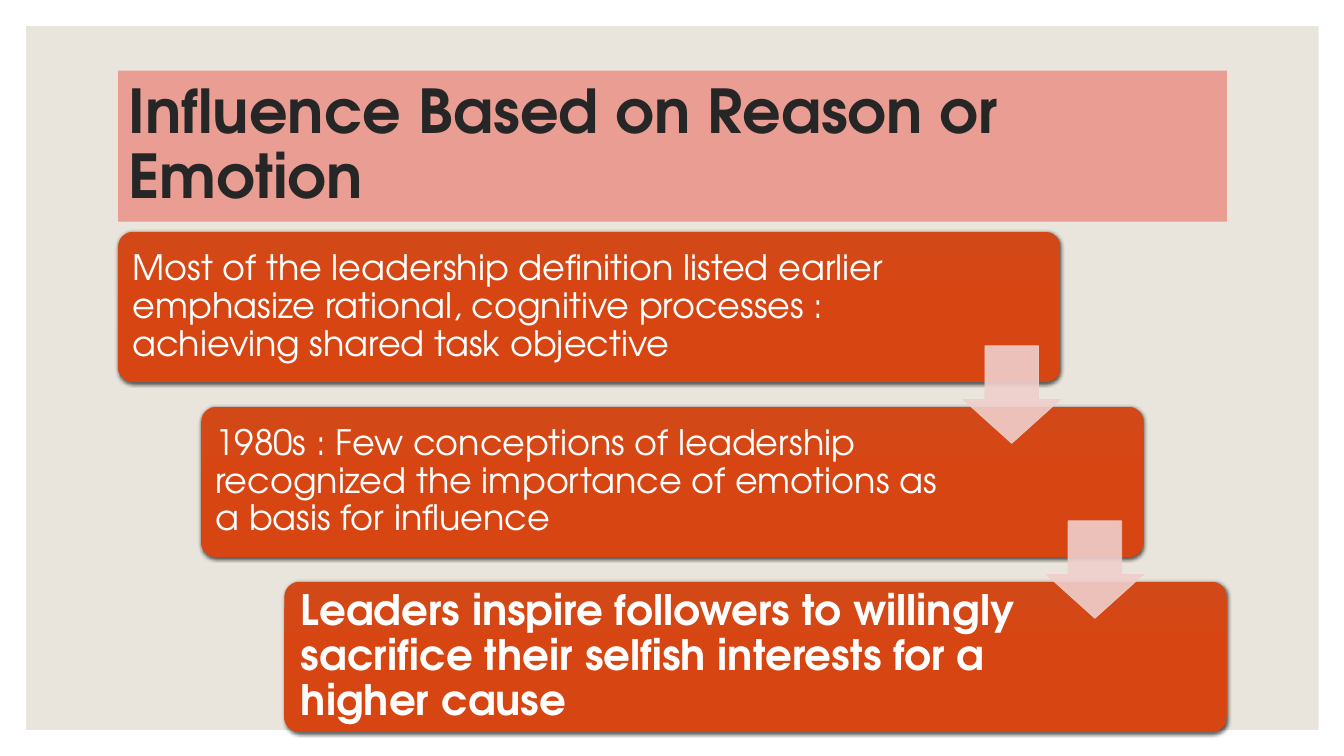
import copy

import pptx
import pptx.dml.color
import pptx.enum.shapes
import pptx.enum.text
import pptx.oxml
import pptx.util
from pptx.oxml.ns import qn

SHAPES = pptx.enum.shapes.MSO_SHAPE
FONT = "TeX Gyre Adventor"
PANEL = (1.95, 3.47, 96.17, 93.07)
HEADING = (8.78, 9.33, 82.5, 20)
CASCADE = (8.78, 30.67, 82.5, 66.13)
CARD_GRADIENT = [(0, "D34817"), (0.5, "D74512"), (1, "D64512")]
STATEMENTS = [
    ("Most of the leadership definition listed earlier emphasize rational, "
     "cognitive processes : achieving shared task objective",
     {"size": 25, "bold": False, "inset": 0.1, "share": 0.83}),
    ("1980s : Few conceptions of leadership recognized the importance of "
     "emotions as a basis for influence",
     {"size": 25, "bold": False, "inset": 0.1, "share": 0.8}),
    ("Leaders inspire followers to willingly sacrifice their selfish "
     "interests for a higher cause",
     {"size": 30, "bold": True, "inset": 0.12, "share": 0.8}),
]
SHADOW = (
    '<a:outerShdw xmlns:a="http://schemas.openxmlformats.org/drawingml/2006/main" '
    'blurRad="38100" dist="12700" dir="5400000" algn="ctr" rotWithShape="0">'
    '<a:srgbClr val="000000"><a:alpha val="63000"/></a:srgbClr></a:outerShdw>'
)


def color(hex_value):
    return pptx.dml.color.RGBColor.from_string(hex_value)


def set_attributes(target, values):
    for name, value in values.items():
        setattr(target, name, value)


def share_box(prs, percents):
    sizes = (prs.slide_width, prs.slide_height) * 2
    return [round(size * percent / 100) for size, percent in zip(sizes, percents)]


def place(target, box):
    set_attributes(target, dict(zip(("left", "top", "width", "height"), map(round, box))))


def add_plain_shape(slide, kind, box):
    shape = slide.shapes.add_shape(kind, *map(round, box))
    shape.shadow.inherit = False
    shape.line.fill.background()
    return shape


def fill_solid(fill, hex_value):
    fill.solid()
    fill.fore_color.rgb = color(hex_value)


def write_text(frame, text, size, bold, hex_value, inset):
    margin = pptx.util.Inches(inset)
    set_attributes(frame, {
        "word_wrap": True,
        "auto_size": pptx.enum.text.MSO_AUTO_SIZE.NONE,
        "vertical_anchor": pptx.enum.text.MSO_ANCHOR.MIDDLE,
        "margin_left": margin,
        "margin_right": margin,
        "margin_top": margin,
        "margin_bottom": margin,
        "text": text,
    })
    paragraph = frame.paragraphs[0]
    set_attributes(paragraph, {"line_spacing": 0.9, "alignment": pptx.enum.text.PP_ALIGN.LEFT})
    font = paragraph.runs[0].font
    set_attributes(font, {"name": FONT, "size": pptx.util.Pt(size), "bold": bold})
    font.color.rgb = color(hex_value)


def add_panel(slide, box):
    panel = add_plain_shape(slide, SHAPES.RECTANGLE, box)
    fill_solid(panel.fill, "E9E5DC")
    slide.shapes.title._element.addprevious(panel._element)


def add_heading(slide, box):
    heading = slide.shapes.title
    place(heading, box)
    fill_solid(heading.fill, "E99D93")
    write_text(heading.text_frame, "Influence Based on Reason or Emotion",
               43.2, True, "262626", 0.1)


def fill_card(card):
    card.fill.gradient()
    card.fill.gradient_angle = 270
    stops = card._element.spPr.find(qn("a:gradFill")).find(qn("a:gsLst"))
    stops.insert(1, copy.deepcopy(stops[0]))
    for stop, (position, hex_value) in zip(card.fill.gradient_stops, CARD_GRADIENT):
        stop.position = position
        stop.color.rgb = color(hex_value)
    effects = card._element.spPr.find(qn("a:effectLst"))
    effects.append(pptx.oxml.parse_xml(SHADOW))


def add_statement(slide, box, text, style):
    left, top, width, height = box
    card = add_plain_shape(slide, SHAPES.ROUNDED_RECTANGLE, box)
    card.adjustments[0] = 0.1
    fill_card(card)
    pad = height * 0.03
    label = slide.shapes.add_textbox(*map(round, (
        left + pad, top + pad, width * style["share"], height - 2 * pad)))
    write_text(label.text_frame, text, style["size"], style["bold"], "FFFFFF", style["inset"])


def add_arrow(slide, card_box):
    left, top, width, height = card_box
    side = height * 0.65
    arrow = add_plain_shape(slide, SHAPES.DOWN_ARROW,
                            (left + width - side, top + height * 0.76, side, side))
    arrow.adjustments[0] = 0.55
    arrow.adjustments[1] = 0.45
    arrow.line.width = pptx.util.Pt(0.5)
    for fill in (arrow.fill, arrow.line.fill):
        fill_solid(fill, "EFCFCC")
    for tint in arrow._element.spPr.iter(qn("a:srgbClr")):
        tint.append(tint.makeelement(qn("a:alpha"), {"val": "90000"}))


def add_cascade(slide, box):
    left, top, width, height = box
    cards = [(left + step * width * 0.075, top + step * height * 0.35,
              width * 0.85, height * 0.3) for step in range(len(STATEMENTS))]
    for card_box, (text, style) in zip(cards, STATEMENTS):
        add_statement(slide, card_box, text, style)
    for card_box in cards[:-1]:
        add_arrow(slide, card_box)


def main():
    prs = pptx.Presentation()
    prs.slide_width = pptx.util.Inches(13.33)
    prs.slide_height = pptx.util.Inches(7.5)
    slide = prs.slides.add_slide(prs.slide_layouts[5])
    fill_solid(slide.background.fill, "FFFFFF")
    add_panel(slide, share_box(prs, PANEL))
    add_heading(slide, share_box(prs, HEADING))
    add_cascade(slide, share_box(prs, CASCADE))
    prs.save("out.pptx")


if __name__ == "__main__":
    main()
